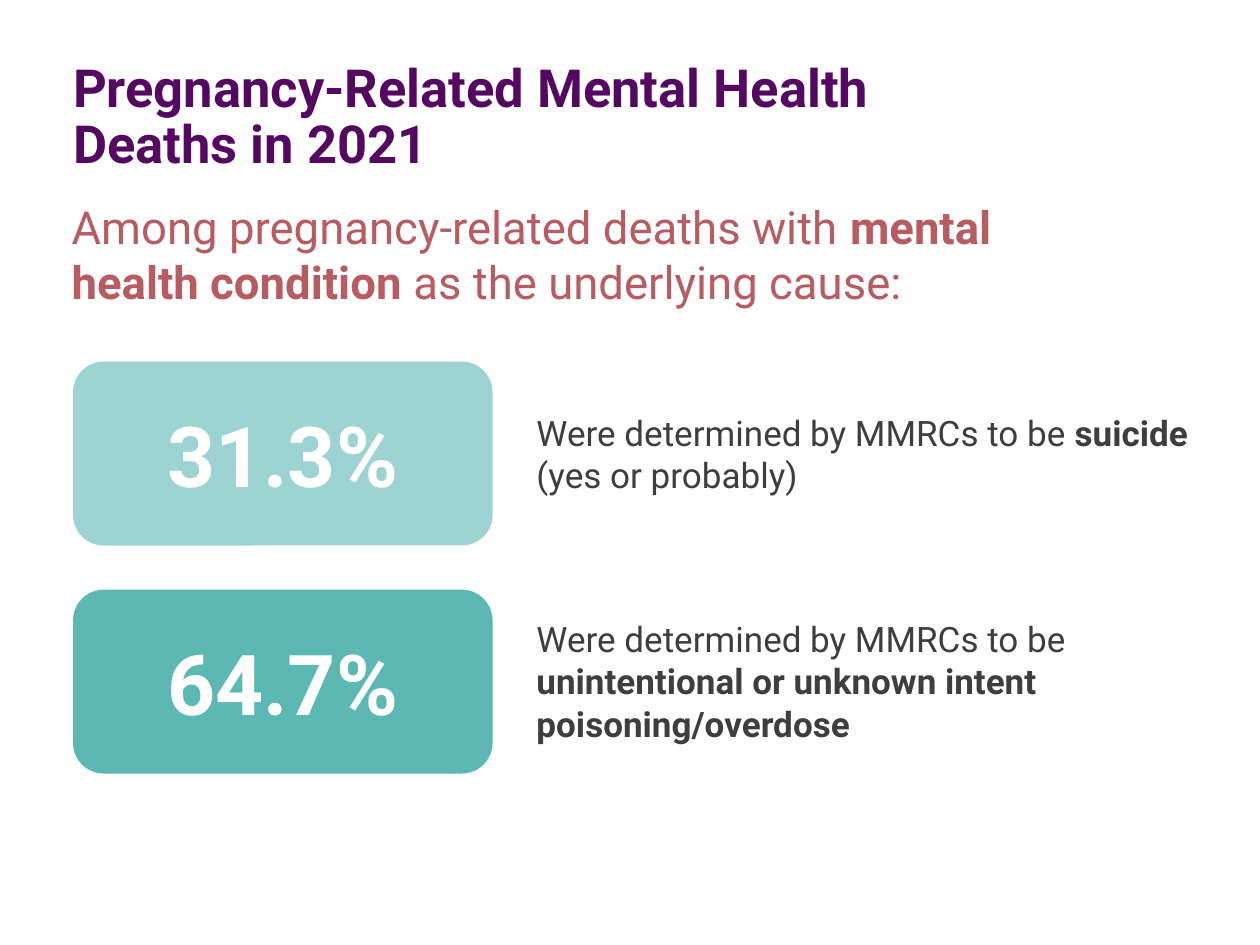
from pptx import Presentation, util as u
from pptx.dml.color import RGBColor
from pptx.enum import shapes, text

COLS, ROWS = 100, 75
FONT = "Roboto"

prs = Presentation()
prs.slide_width, prs.slide_height = u.Inches(10), u.Inches(7.5)


def color(value):
    return RGBColor.from_string(value)


def place(box):
    x, y, w, h = box
    col, row = prs.slide_width / COLS, prs.slide_height / ROWS
    return [round(n) for n in (x * col, y * row, w * col, h * row)]


def write(sp, runs, size, ink, align=text.PP_ALIGN.LEFT,
          anchor=text.MSO_ANCHOR.TOP, spacing=None):
    tf = sp.text_frame
    tf.word_wrap = True
    tf.vertical_anchor = anchor
    p = tf.paragraphs[0]
    p.alignment = align
    if spacing:
        p.line_spacing = spacing
    for content, bold in runs:
        r = p.add_run()
        r.text = content
        r.font.name, r.font.size, r.font.bold = FONT, u.Pt(size), bold
        r.font.color.rgb = color(ink)
    return tf


def add_panel(s, box, fill, kind=shapes.MSO_SHAPE.RECTANGLE):
    sp = s.shapes.add_shape(kind, *place(box))
    sp.shadow.inherit = False
    sp.fill.solid()
    sp.fill.fore_color.rgb = color(fill)
    sp.line.fill.background()
    return sp


def add_title(s, box):
    sp = s.shapes.add_textbox(*place(box))
    tf = write(sp, [("Pregnancy-Related Mental Health Deaths in 2021", True)],
               30, "550861", anchor=text.MSO_ANCHOR.MIDDLE, spacing=0.9)
    tf.margin_left = 0
    tf.margin_top = tf.margin_right = tf.margin_bottom = u.Inches(0.1)


def add_lead(s, box):
    write(add_panel(s, box, "FFFFFF"),
          [("Among pregnancy-related deaths with ", False),
           ("mental health condition ", True),
           ("as the underlying cause:", False)], 26, "B85C61")


def add_finding(s, box, share, fill, caption, caption_height):
    x, y, w, h = box
    card_width, gap = 33.3, 2.5
    card = add_panel(s, (x, y, card_width, h), fill,
                     shapes.MSO_SHAPE.ROUNDED_RECTANGLE)
    write(card, [(share, True)], 48, "FFFFFF",
          align=text.PP_ALIGN.CENTER, anchor=text.MSO_ANCHOR.MIDDLE)
    offset = card_width + gap
    panel = add_panel(s, (x + offset, y + (h - caption_height) / 2,
                          w - offset, caption_height), "FFFFFF")
    write(panel, caption, 20, "3E3E3E")


def main():
    s = prs.slides.add_slide(prs.slide_layouts[6])
    add_title(s, (5.8, 3.5, 71.7, 11.8))
    add_lead(s, (4.7, 15.3, 83, 9.8))
    opening = ("Were determined by MMRCs to be ", False)
    findings = [
        ("31.3%", "9DD4D1",
         [opening, ("suicide", True), (" (yes or probably)", False)], 7.7),
        ("64.7%", "5CB8B2",
         [opening, ("unintentional or unknown intent poisoning/overdose", True)],
         11.1),
    ]
    for i, finding in enumerate(findings):
        add_finding(s, (5.8, 28.7 + i * 18.1, 90.1, 14.6), *finding)
    prs.save("out.pptx")


if __name__ == "__main__":
    main()
